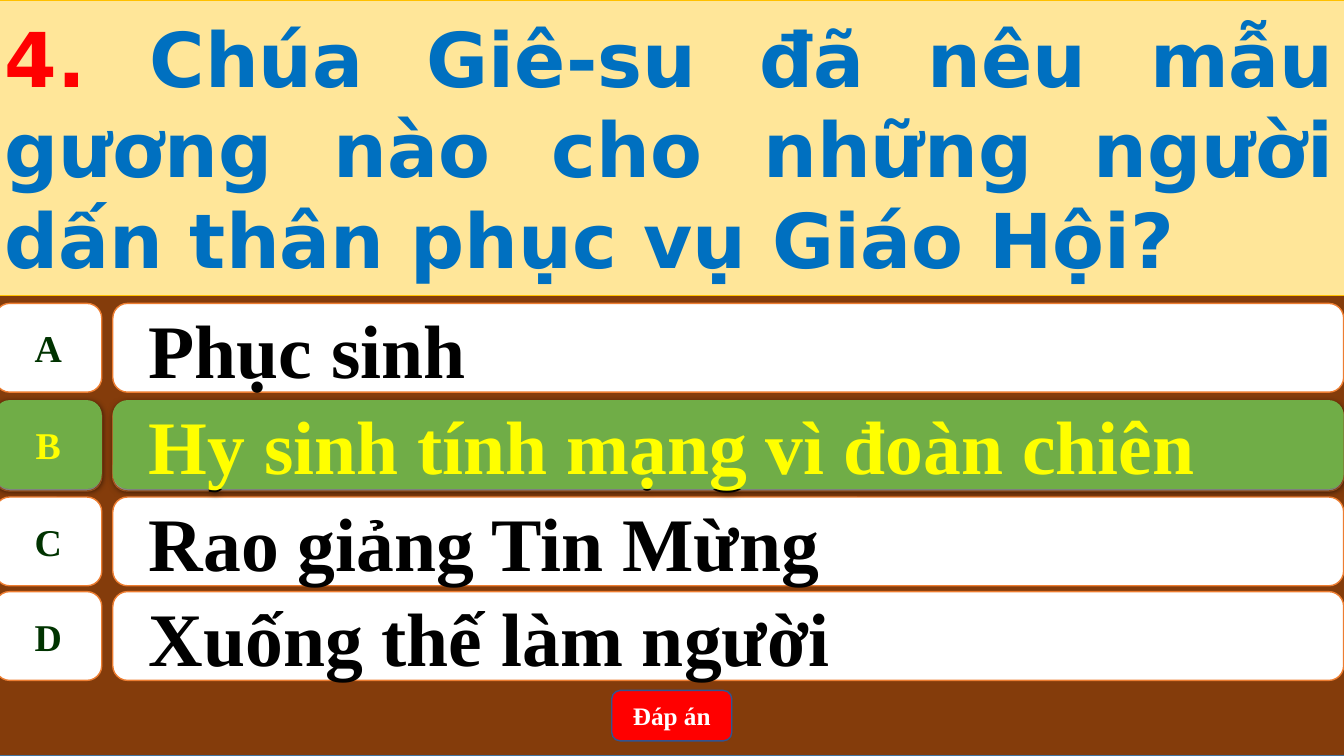
"""Build a quiz slide with a question, four answers and the right one highlighted."""
from lxml import etree
from pptx import Presentation
from pptx import util as u
from pptx.dml.color import RGBColor
from pptx.enum import shapes, text
from pptx.oxml import ns

RECTANGLE = shapes.MSO_SHAPE.RECTANGLE
ROUNDED = shapes.MSO_SHAPE.ROUNDED_RECTANGLE
LETTER_TILE = shapes.MSO_SHAPE.FLOWCHART_ALTERNATE_PROCESS
ALIGN = text.PP_ALIGN


def color(value):
    return RGBColor.from_string(value)


class QuizSlide:
    serif = "Times New Roman"
    sans = "DejaVu Sans"
    left, width = -3.6, 964
    answer_left, answer_width = 80.6, 879.2
    letter_width, row_height = 76.3, 63.4

    def __init__(self, slide):
        self.slide = slide

    def box(self, kind, left, top, width, height, fill, line=None, weight=1):
        shape = self.slide.shapes.add_shape(
            kind, u.Pt(left), u.Pt(top), u.Pt(width), u.Pt(height))
        shape.shadow.inherit = False
        shape.fill.solid()
        shape.fill.fore_color.rgb = color(fill)
        if line:
            shape.line.color.rgb = color(line)
            shape.line.width = u.Pt(weight)
        else:
            shape.line.fill.background()
        return shape

    def label(self, shape, runs, size, font=serif, align=ALIGN.CENTER, wrap=True):
        frame = shape.text_frame
        frame.word_wrap = wrap
        frame.vertical_anchor = text.MSO_ANCHOR.MIDDLE
        paragraph = frame.paragraphs[0]
        paragraph.alignment = align
        for words, ink in runs:
            run = paragraph.add_run()
            run.text = words
            run.font.name = font
            run.font.size = u.Pt(size)
            run.font.bold = True
            run.font.color.rgb = color(ink)

    def cast_shadow(self, shape):
        effects = shape._element.spPr.find(ns.qn("a:effectLst"))
        shadow = etree.SubElement(
            effects, ns.qn("a:outerShdw"), blurRad=str(u.Pt(4.5)),
            dist=str(u.Pt(1.5)), dir="5400000", algn="ctr", rotWithShape="0")
        black = etree.SubElement(shadow, ns.qn("a:srgbClr"), val="000000")
        etree.SubElement(black, ns.qn("a:alpha"), val="63000")

    def question(self, number, words):
        shape = self.box(RECTANGLE, self.left, 0, self.width, 211, "FFE699", "FFC000", 0.5)
        self.label(shape, [(number, "FF0000"), (words, "0070C0")], 54, self.sans, ALIGN.JUSTIFY)

    def answer(self, letter, words, top, correct=False):
        fill, line = ("70AD47", None) if correct else ("FFFFFF", "ED7D31")
        letter_ink, answer_ink = ("FFFF00", "FFFF00") if correct else ("003300", "000000")
        bar = self.box(ROUNDED, self.answer_left, top, self.answer_width,
                       self.row_height, fill, line)
        bar.text_frame.margin_left = u.Pt(22.5)
        self.label(bar, [(words, answer_ink)], 54, align=ALIGN.LEFT)
        tile = self.box(LETTER_TILE, self.left, top, self.letter_width,
                        self.row_height, fill, line)
        self.label(tile, [(letter, letter_ink)], 27, wrap=False)
        if correct:
            self.cast_shadow(bar)
            self.cast_shadow(tile)

    def button(self, words):
        shape = self.box(ROUNDED, 437, 493.2, 85.7, 36, "FF0000", "325491")
        self.label(shape, [(words, "FFFFFF")], 18)


def main():
    presentation = Presentation()
    presentation.slide_width, presentation.slide_height = u.Pt(960), u.Pt(540)
    quiz = QuizSlide(presentation.slides.add_slide(presentation.slide_layouts[6]))
    quiz.box(RECTANGLE, quiz.left, 0, quiz.width, 540, "843C0B", "43739E")
    quiz.question("4. ", "Chúa Giê-su đã nêu mẫu gương nào cho những người "
                         "dấn thân phục vụ Giáo Hội?")
    sacrifice = "Hy sinh tính mạng vì đoàn chiên"
    quiz.answer("A", "Phục sinh", 216.7)
    quiz.answer("B", sacrifice, 287.3)
    quiz.answer("C", "Rao giảng Tin Mừng", 355)
    quiz.answer("D", "Xuống thế làm người", 422.6)
    quiz.button("Đáp án")
    quiz.answer("B", sacrifice, 285.8, correct=True)
    presentation.save("out.pptx")


if __name__ == "__main__":
    main()
